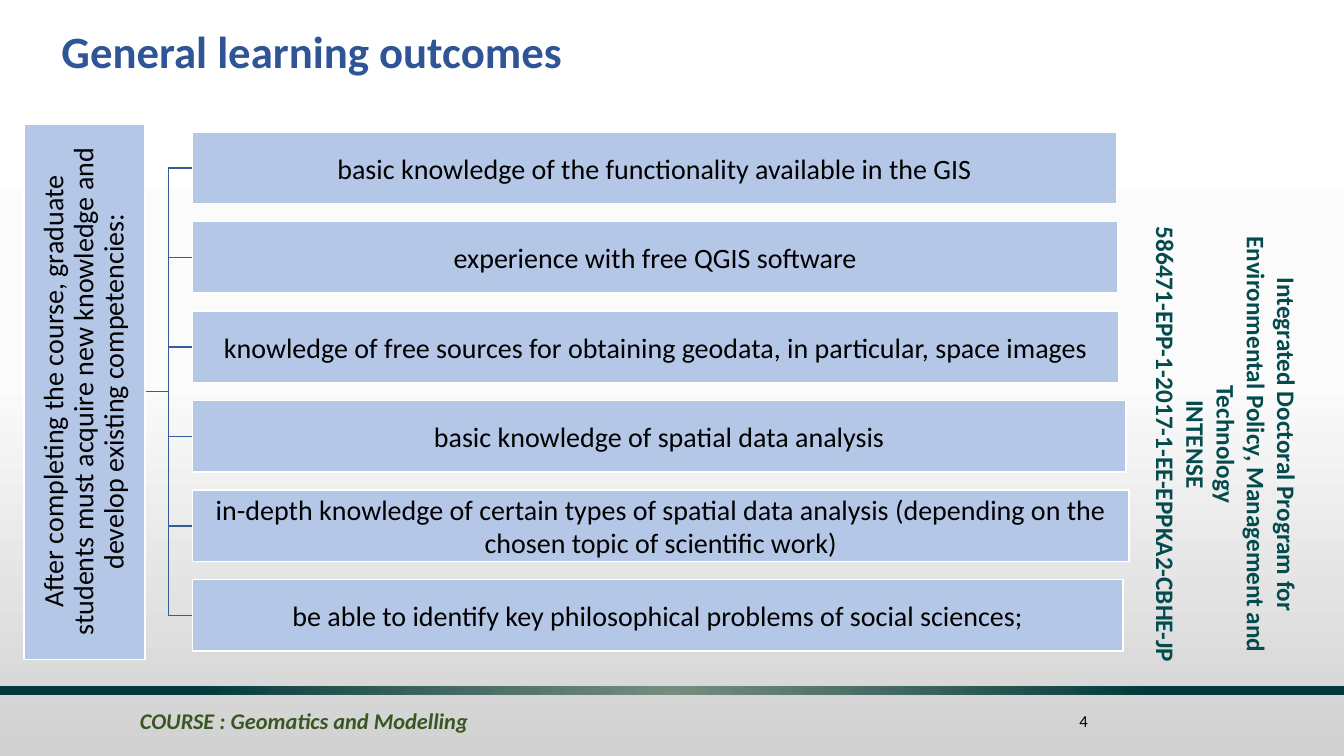
from lxml import etree
from pptx import Presentation
from pptx.dml.color import RGBColor
from pptx.enum.shapes import MSO_SHAPE
from pptx.enum.text import MSO_ANCHOR, MSO_AUTO_SIZE, PP_ALIGN
from pptx.oxml.ns import qn
from pptx.util import Pt

RECT = MSO_SHAPE.RECTANGLE
LEFT, CENTER, RIGHT = PP_ALIGN.LEFT, PP_ALIGN.CENTER, PP_ALIGN.RIGHT
MIDDLE, TOP, BOTTOM = MSO_ANCHOR.MIDDLE, MSO_ANCHOR.TOP, MSO_ANCHOR.BOTTOM
NO_AUTOSIZE = MSO_AUTO_SIZE.NONE
TITLE_ONLY = 5

PREMISE = ("After completing the course, graduate students must acquire new "
           "knowledge and develop existing competencies:")
OUTCOMES = [
    ("basic knowledge of the functionality available in the GIS", 660.2),
    ("experience with free QGIS software", 661),
    ("knowledge of free sources for obtaining geodata, in particular, space images", 661.7),
    ("basic knowledge of spatial data analysis", 666.7),
    ("in-depth knowledge of certain types of spatial data analysis "
     "(depending on the chosen topic of scientific work)", 668.9),
    ("be able to identify key philosophical problems of social sciences;", 664.6),
]
PROGRAM = ("Integrated Doctoral Program for Environmental Policy, Management and Technology\n"
           "INTENSE\n586471-EPP-1-2017-1-EE-EPPKA2-CBHE-JP")


def color(value):
    """Return the colour for a hex string."""
    return RGBColor.from_string(value)


def write(sp, text, size=20, fill="000000", bold=False, italic=False,
          align=CENTER, anchor=MIDDLE, spacing=1.0, inset=None):
    """Fill a shape with one formatted paragraph."""
    tf = sp.text_frame
    tf.word_wrap = True
    tf.auto_size = NO_AUTOSIZE
    tf.vertical_anchor = anchor
    if inset is not None:
        tf.margin_left = tf.margin_right = tf.margin_top = tf.margin_bottom = Pt(inset)
    p = tf.paragraphs[0]
    p.text = text
    p.alignment = align
    p.line_spacing = spacing
    for r in p.runs:
        r.font.name, r.font.size = "Calibri", Pt(size)
        r.font.bold, r.font.italic = bold, italic
        r.font.color.rgb = color(fill)


def add_text(s, text, x, y, w, h, rotation=0, **fmt):
    """Add a text box."""
    sp = s.shapes.add_textbox(Pt(x), Pt(y), Pt(w), Pt(h))
    sp.rotation = rotation
    write(sp, text, **fmt)


def add_panel(s, text, x, y, w, h, rotation=0, **fmt):
    """Add a light blue rectangle with text."""
    sp = s.shapes.add_shape(RECT, Pt(x), Pt(y), Pt(w), Pt(h))
    sp.shadow.inherit = False
    sp.rotation = rotation
    sp.fill.solid()
    sp.fill.fore_color.rgb = color("B4C7E7")
    sp.line.color.rgb = color("FFFFFF")
    sp.line.width = Pt(1)
    write(sp, text, inset=0.72, **fmt)


def set_gradient(owner, fill, stops, radial=False):
    """Give a fill gradient stops of position, colour and opacity in percent."""
    fill.gradient()
    grad = next(owner.iter(qn("a:gradFill")))
    for child in list(grad):
        grad.remove(child)
    gs_list = etree.SubElement(grad, qn("a:gsLst"))
    for position, value, opacity in stops:
        gs = etree.SubElement(gs_list, qn("a:gs"), pos=str(position * 1000))
        clr = etree.SubElement(gs, qn("a:srgbClr"), val=value)
        if opacity < 100:
            etree.SubElement(clr, qn("a:alpha"), val=str(opacity * 1000))
    if radial:
        path = etree.SubElement(grad, qn("a:path"), path="circle")
        etree.SubElement(path, qn("a:fillToRect"), l="50000", t="50000", r="50000", b="50000")
    else:
        etree.SubElement(grad, qn("a:lin"), ang="5400000", scaled="0")


def add_elbow(s, x1, y1, x2, y2):
    """Draw a thin branch line that bends halfway across."""
    middle = (x1 + x2) / 2
    builder = s.shapes.build_freeform(Pt(x1), Pt(y1))
    builder.add_line_segments([(Pt(middle), Pt(y1)), (Pt(middle), Pt(y2)), (Pt(x2), Pt(y2))],
                              close=False)
    sp = builder.convert_to_shape()
    sp.shadow.inherit = False
    sp.fill.background()
    sp.line.color.rgb = color("365B9D")
    sp.line.width = Pt(1)


def add_title(s, text, x, y, w, h):
    """Place the slide title."""
    sp = s.shapes.title
    sp.left, sp.top, sp.width, sp.height = Pt(x), Pt(y), Pt(w), Pt(h)
    write(sp, text, size=32, fill="2F5597", bold=True, align=LEFT, anchor=BOTTOM, spacing=0.9)


def add_outcome_tree(s, x, y, h):
    """Draw the upright premise panel and its branches to the outcome bars."""
    root_w, gap, bar_h, pitch = 86.4, 34, 51.1, 63.94
    root_right, center = x + root_w, y + h / 2
    bar_x = root_right + gap
    first = center - (pitch * (len(OUTCOMES) - 1) + bar_h) / 2
    tops = [first + i * pitch for i in range(len(OUTCOMES))]
    for top in tops:
        add_elbow(s, root_right, center, bar_x, top + bar_h / 2)
    add_panel(s, PREMISE, x + (root_w - h) / 2, center - root_w / 2, h, root_w,
              rotation=270, spacing=0.9)
    for top, (text, width) in zip(tops, OUTCOMES):
        add_panel(s, text, bar_x, top, width, bar_h)


def add_footer(s, x, y, w):
    """Draw the footer band with the course name and slide number."""
    band = s.shapes.add_shape(RECT, Pt(x), Pt(y), Pt(w), Pt(5.8))
    band.shadow.inherit = False
    band.line.fill.background()
    set_gradient(band._element, band.fill, [(0, "668273", 85), (70, "023B3C", 100)], radial=True)
    add_text(s, "4", x + 735.1, y + 10.1, 49, 28.8, size=12, align=RIGHT)
    add_text(s, "COURSE : Geomatics and Modelling", x + 92.9, y + 5.8, 797, 36.7,
             size=16, fill="385723", bold=True, italic=True, align=LEFT)


def main():
    """Build and save the slide."""
    prs = Presentation()
    prs.slide_width, prs.slide_height = Pt(960), Pt(540)
    s = prs.slides.add_slide(prs.slide_layouts[TITLE_ONLY])
    set_gradient(s._element, s.background.fill,
                 [(0, "FFFFFF", 100), (50, "FBFBFB", 100), (100, "D1D1D1", 100)])
    add_title(s, "General learning outcomes", 36.7, 12.2, 713.5, 47.5)
    add_footer(s, 0, 490.3, 960)
    add_text(s, PROGRAM, 702, 259.2, 347, 116.6, rotation=90,
             size=18, fill="034B4D", bold=True, anchor=TOP)
    add_outcome_tree(s, 17.1, 88.6, 382.3)
    prs.save("out.pptx")


if __name__ == "__main__":
    main()
